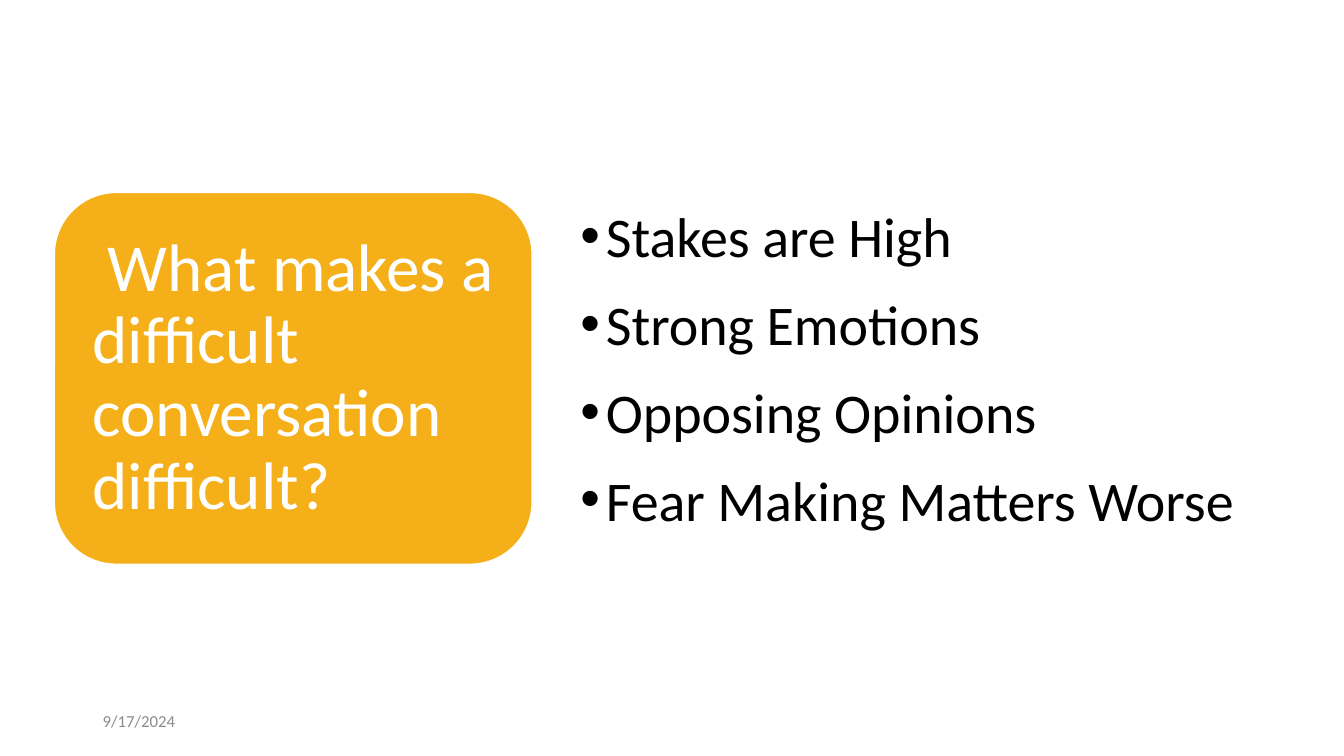
"""Build the slide that asks what makes a difficult conversation difficult."""
from dataclasses import dataclass

from lxml.etree import SubElement
from pptx import Presentation
from pptx.dml.color import RGBColor
from pptx.enum.shapes import MSO_SHAPE
from pptx.enum.text import MSO_ANCHOR, PP_ALIGN
from pptx.oxml.ns import qn
from pptx.util import Cm, Pt


@dataclass(frozen=True)
class Theme:
    font: str = "Calibri"
    card: RGBColor = RGBColor(0xF5, 0xA7, 0x00)
    card_opacity: int = 90
    white: RGBColor = RGBColor(0xFF, 0xFF, 0xFF)
    black: RGBColor = RGBColor(0x00, 0x00, 0x00)
    grey: RGBColor = RGBColor(0x8C, 0x8C, 0x8C)
    question_size: int = 48
    reason_size: int = 40
    date_size: int = 12


theme = Theme()


def write(frame, text, *, size, color, anchor=MSO_ANCHOR.MIDDLE, spacing=1.0,
          before=0, bullet=None, margin=None):
    """Fill a text frame with one paragraph per line of text."""
    frame.word_wrap = True
    frame.vertical_anchor = anchor
    if margin is not None:
        frame.margin_left = frame.margin_right = margin
        frame.margin_top = frame.margin_bottom = margin
    frame.text = text
    for paragraph in frame.paragraphs:
        paragraph.alignment = PP_ALIGN.LEFT
        paragraph.line_spacing = spacing
        paragraph.space_before = Pt(before)
        font = paragraph.runs[0].font
        font.name, font.size, font.color.rgb = theme.font, Pt(size), color
        if bullet:
            properties = paragraph._p.get_or_add_pPr()
            indent = Cm(0.64)
            properties.set("marL", str(indent))
            properties.set("indent", str(-indent))
            SubElement(properties, qn("a:buFont"), typeface="Arial")
            SubElement(properties, qn("a:buChar"), char=bullet)


deck = Presentation()
deck.slide_width, deck.slide_height = Cm(33.87), Cm(19.05)
slide = deck.slides.add_slide(deck.slide_layouts[6])

question = slide.shapes.add_shape(
    MSO_SHAPE.ROUNDED_RECTANGLE, Cm(1.37), Cm(4.85), Cm(12.04), Cm(9.37))
question.shadow.inherit = False
question.fill.solid()
question.fill.fore_color.rgb = theme.card
card_color = question.fill._xPr.find(qn("a:solidFill"))[0]
SubElement(card_color, qn("a:alpha"), val=str(theme.card_opacity * 1000))
question.line.color.rgb = theme.white
question.line.width = Pt(1)
write(question.text_frame, " What makes a difficult conversation difficult?",
      size=theme.question_size, color=theme.white, spacing=0.9, margin=Cm(0.51))

reasons = slide.shapes.add_textbox(Cm(14.38), Cm(4.78), Cm(21.34), Cm(10.26))
write(reasons.text_frame,
      "\n".join(["Stakes are High", "Strong Emotions", "Opposing Opinions",
                 "Fear Making Matters Worse"]),
      size=theme.reason_size, color=theme.black, anchor=MSO_ANCHOR.TOP,
      spacing=1.1, before=10, bullet="•")

date = slide.shapes.add_textbox(Cm(2.34), Cm(17.65), Cm(7.62), Cm(1.02))
write(date.text_frame, "9/17/2024", size=theme.date_size, color=theme.grey)

deck.save("out.pptx")
